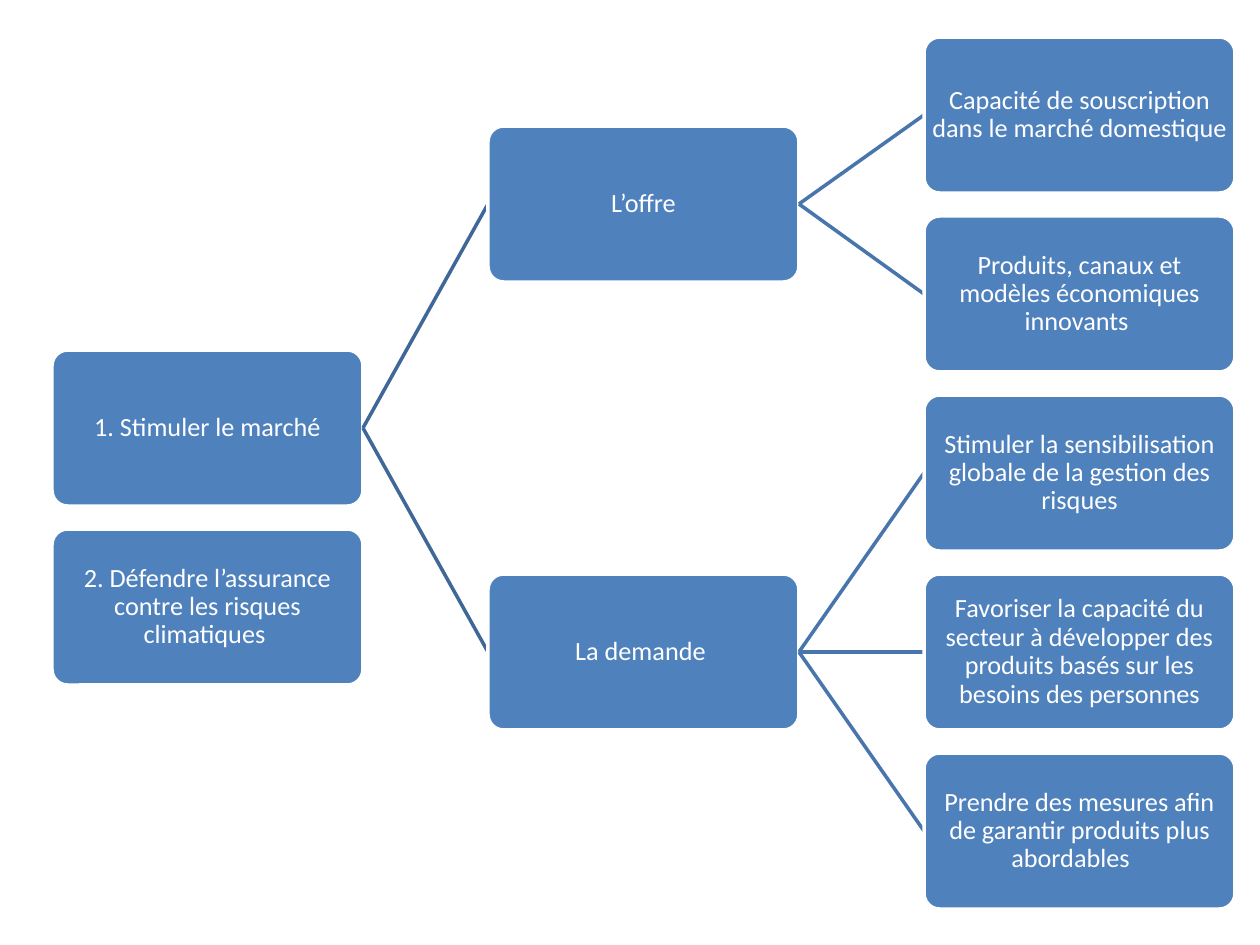
from dataclasses import dataclass

import lxml.etree
import pptx
import pptx.dml.color
import pptx.enum.shapes
import pptx.enum.text
import pptx.oxml.ns
import pptx.slide
import pptx.util

PX_PER_INCH = 126
LEFT, TOP = 52, 37
BOX_WIDTH, BOX_HEIGHT = 311, 156
COLUMN_STEP, ROW_STEP = 436, 179
INSET = 1
BOX_FILL = "4F81BD"
WHITE = "FFFFFF"
LINE_COLORS = ("3F6797", "4875AC")
LINE_POINTS = 2


@dataclass
class Node:
    text: str
    column: int
    row: float
    children: tuple["Node", ...] = ()

    @property
    def left(self) -> int:
        return LEFT + self.column * COLUMN_STEP

    @property
    def top(self) -> int:
        return round(TOP + self.row * ROW_STEP)

    @property
    def middle(self) -> int:
        return self.top + BOX_HEIGHT // 2


def px(length: int) -> pptx.util.Emu:
    return pptx.util.Emu(round(length * 914400 / PX_PER_INCH))


def color(value: str) -> pptx.dml.color.RGBColor:
    return pptx.dml.color.RGBColor.from_string(value)


def branch(text: str, column: int, *children: Node) -> Node:
    row = sum(child.row for child in children) / len(children)
    return Node(text, column, row, children)


def draw_box(page: pptx.slide.Slide, node: Node) -> None:
    box = page.shapes.add_shape(
        pptx.enum.shapes.MSO_SHAPE.ROUNDED_RECTANGLE,
        px(node.left), px(node.top), px(BOX_WIDTH), px(BOX_HEIGHT),
    )
    box.adjustments[0] = 0.1
    box.shadow.inherit = False
    box.fill.solid()
    box.fill.fore_color.rgb = color(BOX_FILL)
    box.line.color.rgb = color(WHITE)
    box.line.width = pptx.util.Pt(LINE_POINTS)
    frame_format = {
        "word_wrap": True,
        "vertical_anchor": pptx.enum.text.MSO_ANCHOR.MIDDLE,
        "margin_left": px(INSET),
        "margin_right": px(INSET),
        "margin_top": px(INSET),
        "margin_bottom": px(INSET),
    }
    for name, value in frame_format.items():
        setattr(box.text_frame, name, value)
    para = box.text_frame.paragraphs[0]
    para.alignment = pptx.enum.text.PP_ALIGN.CENTER
    para.line_spacing = 0.9
    span = para.add_run()
    span.text = node.text
    for name, value in {"name": "Calibri", "size": pptx.util.Pt(15)}.items():
        setattr(span.font, name, value)
    span.font.color.rgb = color(WHITE)


def draw_link(page: pptx.slide.Slide, parent: Node, child: Node) -> None:
    link = page.shapes.add_connector(
        pptx.enum.shapes.MSO_CONNECTOR.STRAIGHT,
        px(parent.left + BOX_WIDTH), px(parent.middle),
        px(child.left), px(child.middle),
    )
    link.line.color.rgb = color(LINE_COLORS[parent.column])
    link.line.width = pptx.util.Pt(LINE_POINTS)
    properties = link._element.spPr
    lxml.etree.SubElement(properties, pptx.oxml.ns.qn("a:effectLst"))


def draw_tree(page: pptx.slide.Slide, node: Node) -> None:
    draw_box(page, node)
    for child in node.children:
        draw_link(page, node, child)
        draw_tree(page, child)


def main() -> None:
    supply = branch(
        "L’offre", 1,
        Node("Capacité de souscription dans le marché domestique", 2, 0),
        Node("Produits, canaux et modèles économiques innovants ", 2, 1),
    )
    demand = branch(
        "La demande ", 1,
        Node("Stimuler la sensibilisation globale de la gestion des risques", 2, 2),
        Node("Favoriser la capacité du secteur à développer des produits "
             "basés sur les besoins des personnes", 2, 3),
        Node("Prendre des mesures afin de garantir produits plus abordables   ", 2, 4),
    )
    market = branch("1. Stimuler le marché", 0, supply, demand)
    insurance = Node(
        "2. Défendre l’assurance contre les risques climatiques ", 0, market.row + 1
    )

    deck = pptx.Presentation()
    deck.slide_width = pptx.util.Inches(10)
    deck.slide_height = pptx.util.Inches(7.5)
    page = deck.slides.add_slide(deck.slide_layouts[6])
    for root in (market, insurance):
        draw_tree(page, root)
    deck.save("out.pptx")


if __name__ == "__main__":
    main()
